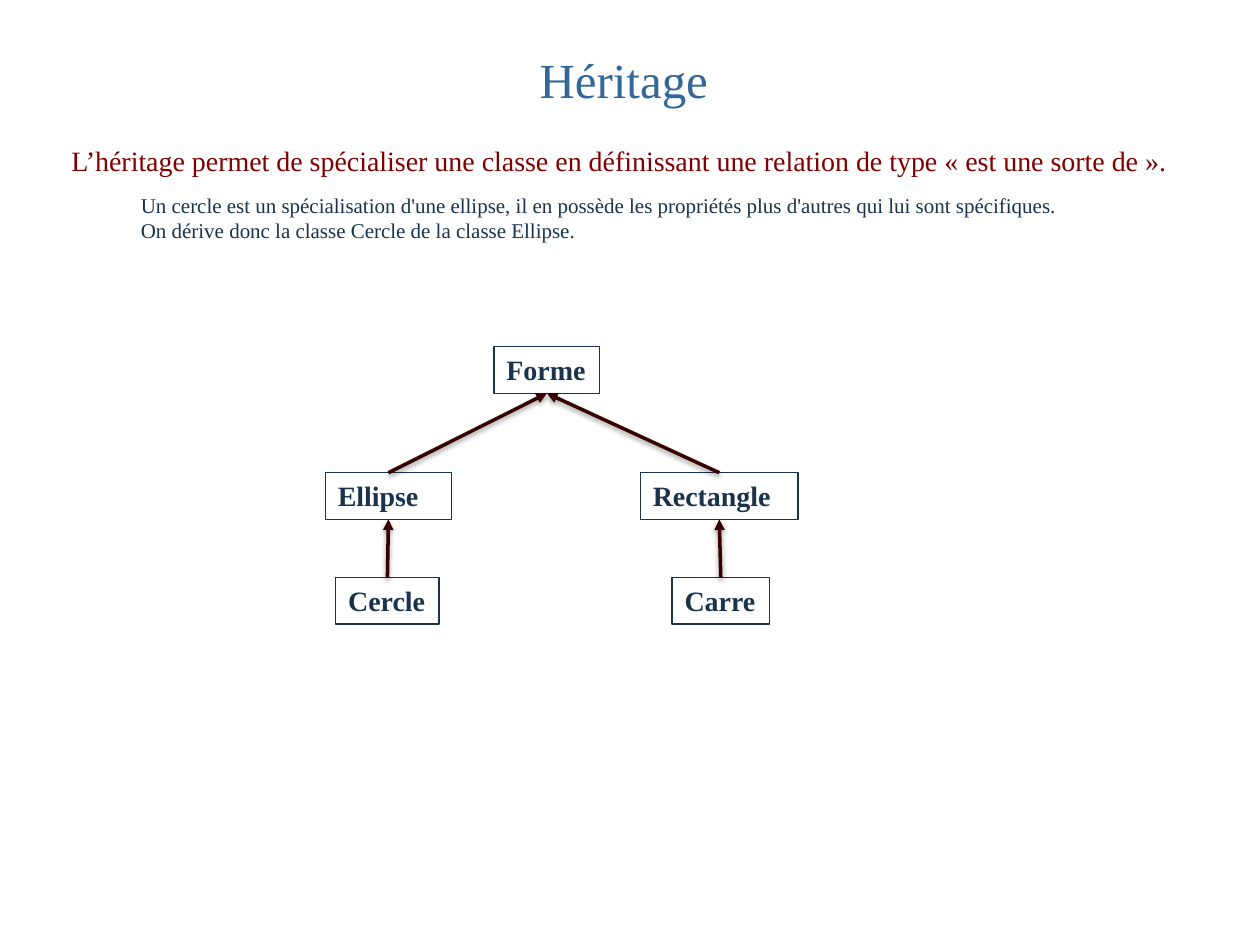
import pptx
import pptx.dml.color
import pptx.enum.shapes
import pptx.enum.text
import pptx.oxml
import pptx.oxml.ns
import pptx.util
from pptx.util import Cm, Pt

RGBColor = pptx.dml.color.RGBColor
TITLE_BLUE = RGBColor(0x33, 0x66, 0x99)
DARK_RED = RGBColor(0x80, 0x00, 0x00)
NAVY = RGBColor(0x19, 0x33, 0x4D)
ARROW_BROWN = RGBColor(0x36, 0x00, 0x00)

ALIGN = pptx.enum.text.PP_ALIGN
ANCHOR = pptx.enum.text.MSO_ANCHOR
FONT_NAME = "Times New Roman"
BOX_HEIGHT = 0.94
TOP_SIDE, BOTTOM_SIDE = 0, 2

# Class name: left, top, width in cm, and whether the text wraps
CLASSES = {
    "Forme": (9.96, 6.99, 2.13, False),
    "Ellipse": (6.56, 9.53, 2.54, True),
    "Rectangle": (12.91, 9.53, 3.18, True),
    "Cercle": (6.77, 11.64, 2.08, False),
    "Carre": (13.55, 11.64, 1.96, False),
}
# Derived class, base class
INHERITANCE = [
    ("Ellipse", "Forme"),
    ("Cercle", "Ellipse"),
    ("Rectangle", "Forme"),
    ("Carre", "Rectangle"),
]

SHADOW_XML = (
    f'<a:effectLst {pptx.oxml.ns.nsdecls("a")}>'
    '<a:outerShdw blurRad="39400" dist="20300" dir="5400000" rotWithShape="0">'
    '<a:srgbClr val="000000"><a:alpha val="38000"/></a:srgbClr>'
    "</a:outerShdw></a:effectLst>"
)
ARROWHEAD_XML = f'<a:tailEnd {pptx.oxml.ns.nsdecls("a")} type="triangle"/>'


def write_text(shape, text, color, size, bold=False, align=ALIGN.LEFT,
               anchor=ANCHOR.TOP, wrap=True):
    frame = shape.text_frame
    frame.word_wrap = wrap
    frame.vertical_anchor = anchor
    paragraph = frame.paragraphs[0]
    paragraph.alignment = align
    run = paragraph.add_run()
    run.text = text
    run.font.color.rgb = color
    font_format = {"name": FONT_NAME, "size": Pt(size), "bold": bold}
    for attribute, value in font_format.items():
        setattr(run.font, attribute, value)
    return paragraph


def add_text(slide, box, text, color, size, **options):
    shape = slide.shapes.add_textbox(*map(Cm, box))
    return write_text(shape, text, color, size, **options)


def add_class_box(slide, name, left, top, width, wrap):
    shape = slide.shapes.add_shape(
        pptx.enum.shapes.MSO_SHAPE.RECTANGLE,
        Cm(left), Cm(top), Cm(width), Cm(BOX_HEIGHT))
    shape.shadow.inherit = False
    shape.fill.background()
    shape.line.color.rgb = NAVY
    shape.line.width = Pt(0.75)
    write_text(shape, name, NAVY, 16, bold=True, wrap=wrap)
    return shape


def add_inheritance_arrow(slide, derived, base):
    connector = slide.shapes.add_connector(
        pptx.enum.shapes.MSO_CONNECTOR.STRAIGHT, 0, 0, 0, 0)
    connector.begin_connect(derived, TOP_SIDE)
    connector.end_connect(base, BOTTOM_SIDE)
    connector.line.color.rgb = ARROW_BROWN
    connector.line.width = Pt(2)
    connector.line._get_or_add_ln().append(pptx.oxml.parse_xml(ARROWHEAD_XML))
    connector._element.spPr.append(pptx.oxml.parse_xml(SHADOW_XML))


def main():
    presentation = pptx.Presentation()
    presentation.slide_width = Cm(25.4)
    presentation.slide_height = Cm(19.05)
    slide = presentation.slides.add_slide(presentation.slide_layouts[6])

    # Title and explanation
    add_text(slide, (1.78, 0, 21.59, 3.18), "Héritage", TITLE_BLUE, 28,
             align=ALIGN.CENTER, anchor=ANCHOR.MIDDLE)
    definition = add_text(
        slide, (1.19, 2.77, 23.5, 1.19),
        "L’héritage permet de spécialiser une classe en définissant une "
        "relation de type « est une sorte de ».", DARK_RED, 16)
    definition.space_before = Pt(3)
    add_text(
        slide, (2.59, 3.76, 19.05, 1.3),
        "Un cercle est un spécialisation d'une ellipse, il en possède les "
        "propriétés plus d'autres qui lui sont spécifiques. On dérive donc "
        "la classe Cercle de la classe Ellipse.", NAVY, 12)

    # Class diagram
    boxes = {name: add_class_box(slide, name, *place)
             for name, place in CLASSES.items()}
    for derived, base in INHERITANCE:
        add_inheritance_arrow(slide, boxes[derived], boxes[base])

    presentation.save("out.pptx")


if __name__ == "__main__":
    main()
